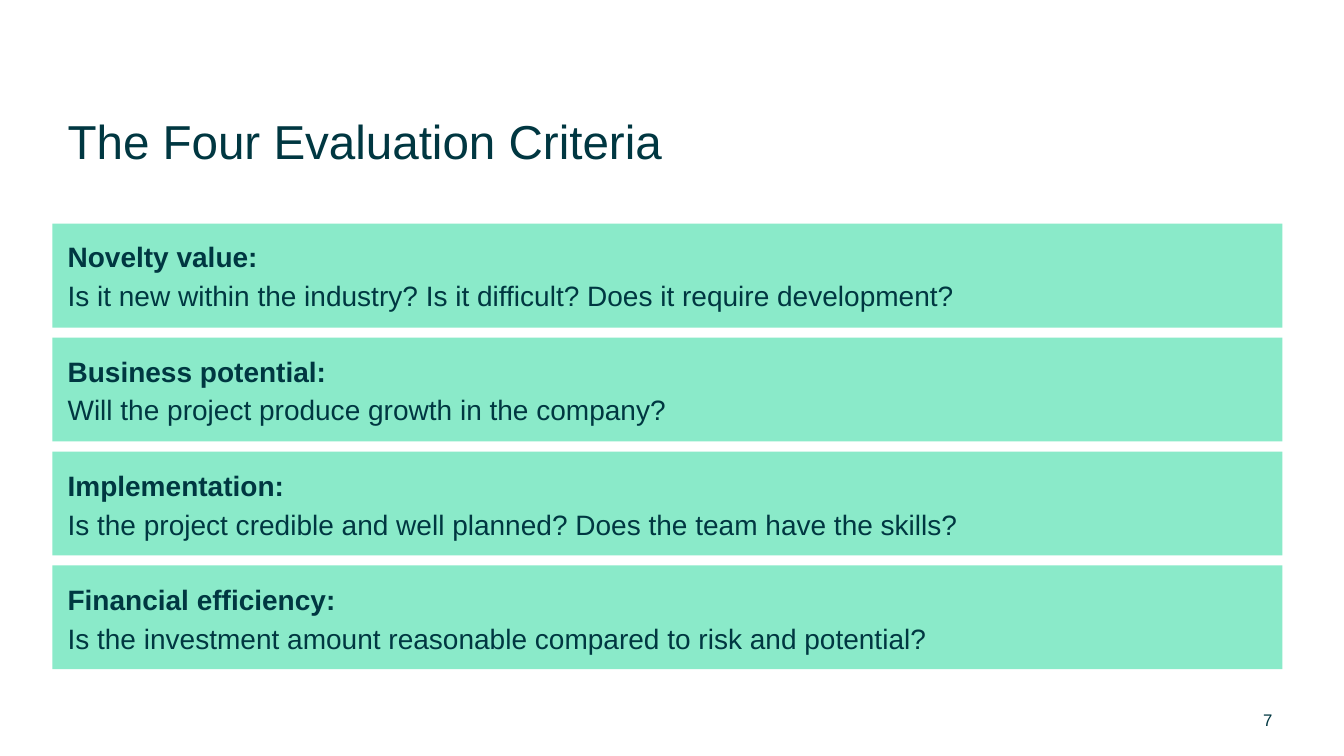
from lxml import etree
from pptx import Presentation
from pptx.dml.color import RGBColor
from pptx.enum.shapes import MSO_SHAPE
from pptx.enum.text import MSO_ANCHOR, MSO_AUTO_SIZE, PP_ALIGN
from pptx.oxml.ns import qn
from pptx.util import Inches, Pt

RECTANGLE = MSO_SHAPE.RECTANGLE
TOP = MSO_ANCHOR.TOP
NO_AUTOFIT = MSO_AUTO_SIZE.NONE
LEFT, RIGHT = PP_ALIGN.LEFT, PP_ALIGN.RIGHT

COLOURS = {"ink": "003741", "mint": "8AEAC9"}
FONT = "Arial"
TITLE_AND_CONTENT = 1

BAND_TOP, BAND_PITCH = 2.22, 1.13
CRITERIA = [
    ("Novelty value:",
     "Is it new within the industry? Is it difficult? Does it require development?"),
    ("Business potential:",
     "Will the project produce growth in the company?"),
    ("Implementation:",
     "Is the project credible and well planned? Does the team have the skills?"),
    ("Financial efficiency:",
     "Is the investment amount reasonable compared to risk and potential?"),
]


def colour(name):
    return RGBColor.from_string(COLOURS[name])


def place(shape, left, top, width, height):
    shape.left, shape.top = Inches(left), Inches(top)
    shape.width, shape.height = Inches(width), Inches(height)


def prepare_frame(shape, side_margin=0):
    frame = shape.text_frame
    frame.word_wrap = True
    frame.auto_size = NO_AUTOFIT
    frame.vertical_anchor = TOP
    frame.margin_left = frame.margin_right = Inches(side_margin)
    frame.margin_top = frame.margin_bottom = 0
    return frame


def style_paragraph(paragraph, size, align=LEFT):
    paragraph.alignment = align
    paragraph.font.name = FONT
    paragraph.font.size = Pt(size)
    paragraph.font.color.rgb = colour("ink")


def remove_bullet(paragraph):
    properties = paragraph._p.get_or_add_pPr()
    properties.set("marL", "0")
    properties.set("indent", "0")
    etree.SubElement(properties, qn("a:buNone"))


def add_band(page, top):
    band = page.shapes.add_shape(
        RECTANGLE, Inches(0.52), Inches(top), Inches(12.2), Inches(1.03))
    band.shadow.inherit = False
    band.fill.solid()
    band.fill.fore_color.rgb = colour("mint")
    band.line.fill.background()
    # Bands go behind the title and body placeholders.
    page.shapes._spTree.insert(2, band._element)


def fill_title(title):
    place(title, 0.67, 1.15, 7.03, 0.96)
    paragraph = prepare_frame(title).paragraphs[0]
    paragraph.text = "The Four Evaluation Criteria"
    paragraph.line_spacing = 0.95
    style_paragraph(paragraph, 34)


def fill_criteria(body):
    place(body, 0.67, 2.33, 11.57, 4.4)
    frame = prepare_frame(body)
    for index, (name, question) in enumerate(CRITERIA):
        paragraph = frame.add_paragraph() if index else frame.paragraphs[0]
        remove_bullet(paragraph)
        paragraph.line_spacing = 1.15
        paragraph.space_before = Pt(26.4 if index else 0)
        style_paragraph(paragraph, 20)
        heading = paragraph.add_run()
        heading.text = name
        heading.font.bold = True
        paragraph.add_line_break()
        paragraph.add_run().text = question


def add_page_number(page, number):
    box = page.shapes.add_textbox(
        Inches(9.72), Inches(7.04), Inches(3), Inches(0.4))
    paragraph = prepare_frame(box, side_margin=0.1).paragraphs[0]
    paragraph.text = number
    style_paragraph(paragraph, 12, RIGHT)


def main():
    deck = Presentation()
    deck.slide_width, deck.slide_height = Inches(13.33), Inches(7.5)
    page = deck.slides.add_slide(deck.slide_layouts[TITLE_AND_CONTENT])
    for index in range(len(CRITERIA)):
        add_band(page, BAND_TOP + index * BAND_PITCH)
    fill_title(page.shapes.title)
    fill_criteria(page.placeholders[1])
    add_page_number(page, "7")
    deck.save("out.pptx")


if __name__ == "__main__":
    main()
